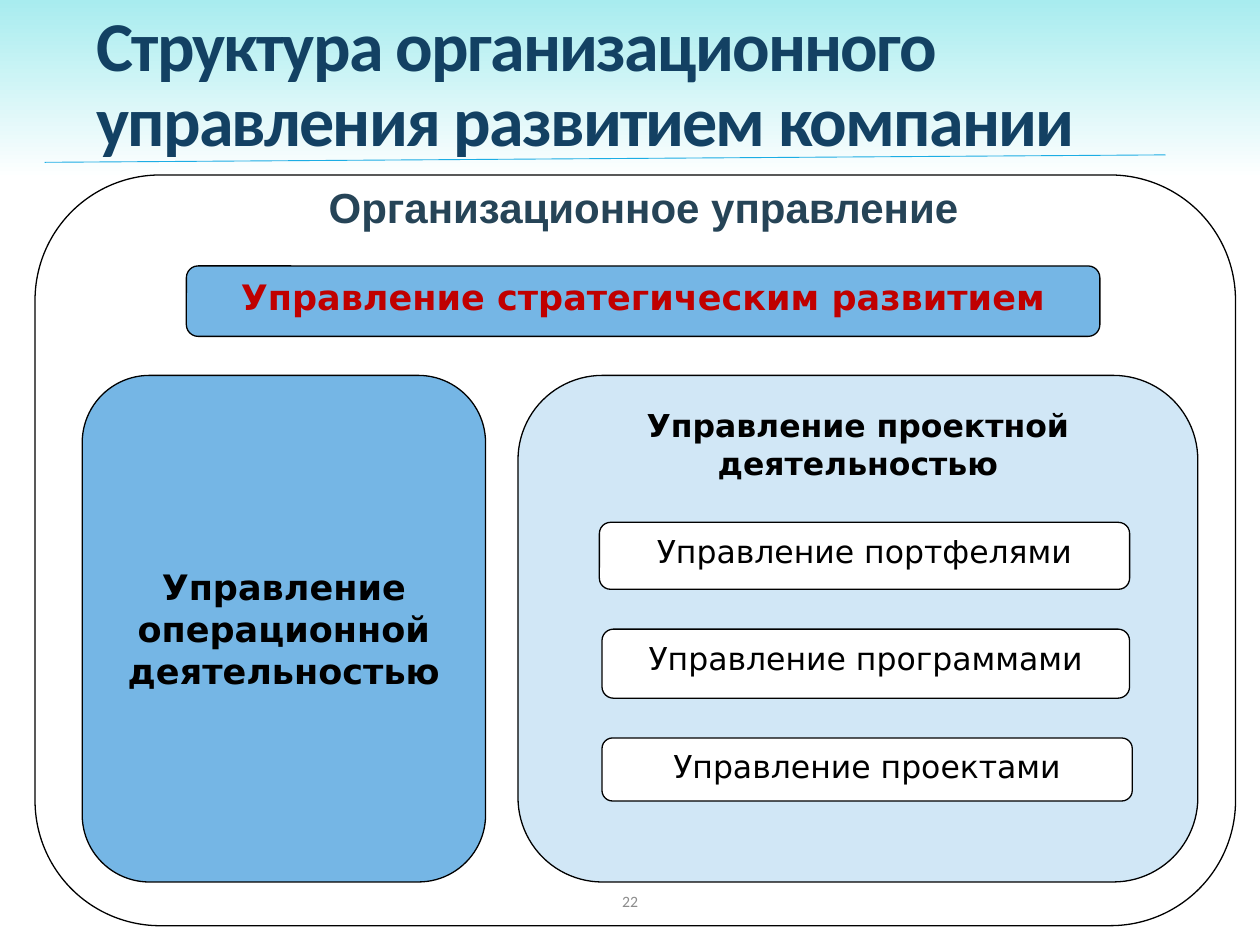
from lxml.etree import SubElement
from pptx import Presentation
from pptx.dml.color import RGBColor
from pptx.enum.shapes import MSO_CONNECTOR, MSO_SHAPE
from pptx.enum.text import MSO_ANCHOR as ANCHOR, PP_ALIGN as ALIGN
from pptx.oxml.ns import qn
from pptx.util import Pt


def color(value):
    return RGBColor.from_string(value)


def write(shape, text, size, font, ink, bold=False, anchor=ANCHOR.TOP, align=ALIGN.CENTER):
    frame = shape.text_frame
    frame.word_wrap = True
    frame.vertical_anchor = anchor
    frame.text = text
    paragraph = frame.paragraphs[0]
    paragraph.alignment = align
    run = paragraph.runs[0]
    run.font.size = Pt(size)
    run.font.name = font
    run.font.bold = bold
    run.font.color.rgb = color(ink)
    return paragraph


presentation = Presentation()
presentation.slide_width, presentation.slide_height = Pt(720), Pt(540)
slide = presentation.slides.add_slide(presentation.slide_layouts[6])
shapes = slide.shapes

# Background: white, turning turquoise at the top
background = slide.background.fill
background.gradient()
background.gradient_angle = 90
for stop, (position, tint) in zip(background.gradient_stops, [(0.81, "FFFFFF"), (1, "A8ECEF")]):
    stop.position = position
    stop.color.rgb = color(tint)

# Title
title = shapes.add_textbox(Pt(48), Pt(-3), Pt(621), Pt(104.5))
paragraph = write(title, "Структура организационного управления развитием компании",
                  40, "Calibri", "134163", True, ANCHOR.MIDDLE, ALIGN.LEFT)
paragraph.line_spacing = 0.9
paragraph.runs[0].font._element.set("spc", "-100")

# Slide number
number = shapes.add_textbox(Pt(238.5), Pt(500.5), Pt(243), Pt(28.75))
write(number, "22", 9, "Calibri", "8C8C8C", anchor=ANCHOR.MIDDLE)

# Boxes: left, top, width, height, fill, text, size, ink, bold, anchor
boxes = [
    (20, 100, 686, 429, None, None, 0, None, False, ANCHOR.TOP),
    (106.5, 152, 522, 40.25, "75B6E5", "Управление стратегическим развитием",
     20, "C00000", True, ANCHOR.TOP),
    (47, 214.5, 230.5, 289.5, "75B6E5", "Управление операционной деятельностью",
     20, "000000", True, ANCHOR.MIDDLE),
    (296, 214.5, 388.5, 289.5, "D1E7F6", "Управление проектной деятельностью",
     18, "000000", True, ANCHOR.TOP),
    (342.5, 298.5, 303, 38.25, "FFFFFF", "Управление портфелями",
     18, "000000", False, ANCHOR.TOP),
    (344, 359.5, 301.5, 39.5, "FFFFFF", "Управление программами",
     18, "000000", False, ANCHOR.TOP),
    (344, 421.75, 303, 36, "FFFFFF", "Управление проектами",
     18, "000000", False, ANCHOR.TOP),
]
for left, top, width, height, fill, text, size, ink, bold, anchor in boxes:
    box = shapes.add_shape(MSO_SHAPE.ROUNDED_RECTANGLE, Pt(left), Pt(top), Pt(width), Pt(height))
    box.shadow.inherit = False
    box.line.color.rgb = color("000000")
    box.line.width = Pt(0.75)
    if fill:
        box.fill.solid()
        box.fill.fore_color.rgb = color(fill)
    else:
        box.fill.background()
    if text:
        write(box, text, size, "DejaVu Sans", ink, bold, anchor)

# Heading of the outer frame
heading = shapes.add_textbox(Pt(114), Pt(100), Pt(507.5), Pt(36.5))
write(heading, "Организационное управление", 24, "Arial", "264457", True)

# Rule under the title
rule = shapes.add_connector(MSO_CONNECTOR.STRAIGHT, Pt(25.5), Pt(92.75), Pt(666), Pt(88.5))
rule.line.color.rgb = color("1CADE4")
rule.line.width = Pt(0.5)
SubElement(rule._element.spPr, qn("a:effectLst"))

presentation.save("out.pptx")
